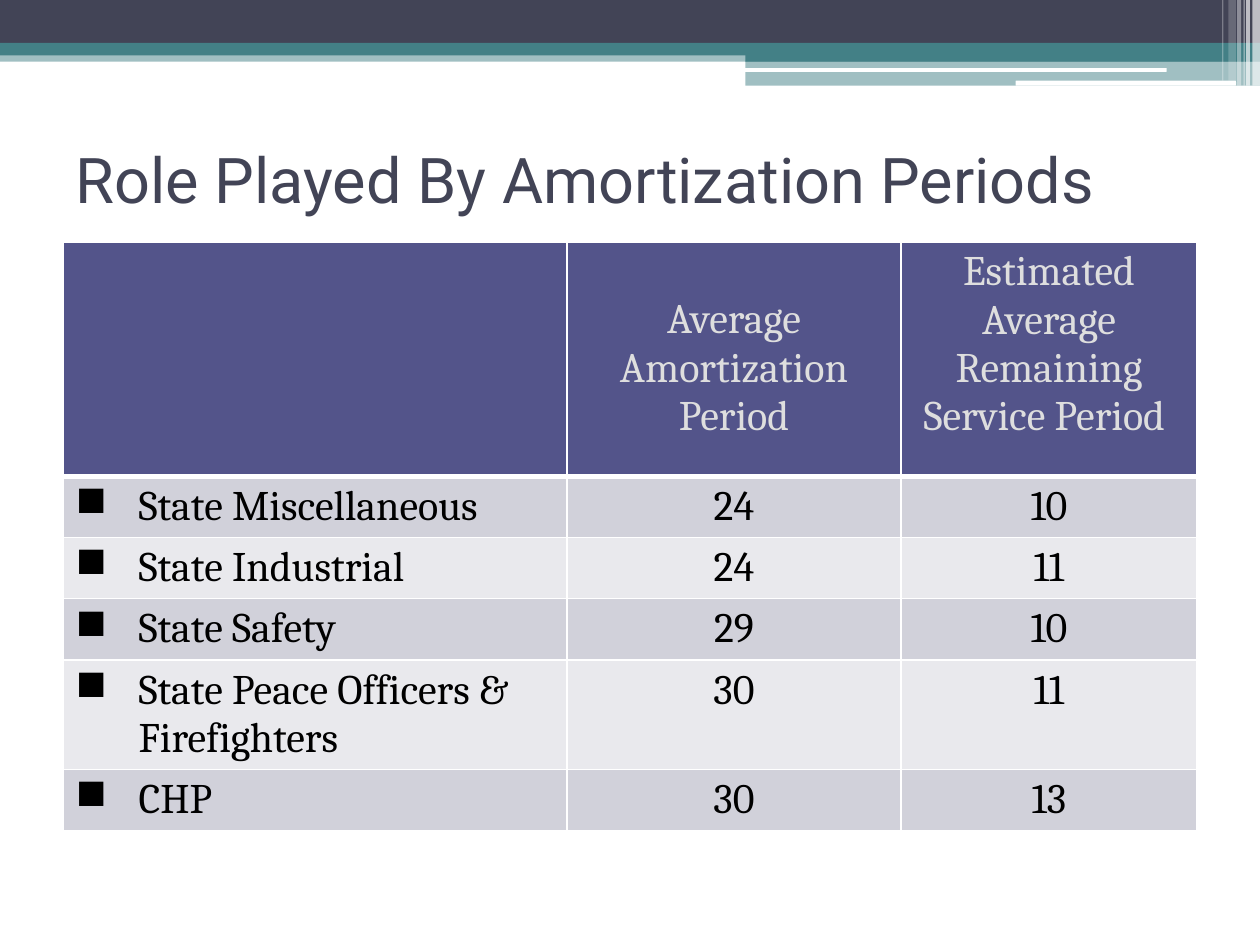
"""Build a slide with a table of amortization periods under a banded header."""
from dataclasses import dataclass

import lxml.etree
import pptx
import pptx.dml.color
import pptx.enum.shapes
import pptx.enum.text
import pptx.oxml.ns
import pptx.util

Pt = pptx.util.Pt
RGBColor = pptx.dml.color.RGBColor
qn = pptx.oxml.ns.qn
MSO_SHAPE = pptx.enum.shapes.MSO_SHAPE
PP_ALIGN = pptx.enum.text.PP_ALIGN
MSO_ANCHOR = pptx.enum.text.MSO_ANCHOR

WHITE = RGBColor(0xFF, 0xFF, 0xFF)
BLACK = RGBColor(0, 0, 0)
SLATE = RGBColor(0x42, 0x44, 0x56)
TEAL = RGBColor(0x43, 0x80, 0x86)
HEADER_FILL = RGBColor(0x53, 0x54, 0x8A)
HEADER_TEXT = RGBColor(0xDE, 0xDE, 0xDE)
ROW_FILLS = (RGBColor(0xD1, 0xD1, 0xDA), RGBColor(0xE9, 0xE9, 0xED))


@dataclass(frozen=True)
class Band:
    left: float
    top: float
    width: float
    height: float
    color: RGBColor
    opacity: int = 100
    rounded: bool = False


@dataclass(frozen=True)
class PlanRow:
    name: str
    amortization: int
    service: int
    height: float = 35


BANDS = (
    Band(0, 28.8, 720, 6.5, TEAL, 50),
    Band(0, 0, 720, 24.5, SLATE),
    Band(0, 24.5, 720, 7.2, TEAL),
    Band(426, 28, 294, 7.2, TEAL),
    Band(426, 34.6, 294, 14.4, TEAL, 50),
    Band(425.5, 38.9, 241.2, 2.2, WHITE, rounded=True),
    Band(580.3, 46.1, 126, 2.9, WHITE, rounded=True),
    Band(715.7, 0, 4.3, 49, WHITE, 65),
    Band(712.1, 0, 2.2, 49, WHITE, 65),
    Band(710.6, 0, 0.7, 49, WHITE, 60),
    Band(707, 0, 2.2, 49, WHITE, 40),
    Band(702, 0, 4.3, 46.1, WHITE, 20),
    Band(698.4, 0, 0.7, 46.1, WHITE, 30),
)
HEADINGS = ("", "Average Amortization Period", "Estimated Average Remaining Service Period ")
HEADING_TOP_MARGINS = (3.6, 31, 3.6)
HEADING_HEIGHT = 134
COLUMN_WIDTHS = (288, 190.8, 169.2)
PLAN_ROWS = (
    PlanRow("State Miscellaneous", 24, 10),
    PlanRow("State Industrial", 24, 11),
    PlanRow("State Safety", 29, 10),
    PlanRow("State Peace Officers & Firefighters", 30, 11, 62),
    PlanRow("CHP", 30, 13),
)


def apply_format(target: object, values: dict) -> None:
    for name, value in values.items():
        setattr(target, name, value)


def format_font(font: pptx.text.text.Font, name: str, size: float, color: RGBColor) -> None:
    apply_format(font, {"name": name, "size": Pt(size), "bold": False})
    font.color.rgb = color


def draw_band(slide: pptx.slide.Slide, band: Band) -> None:
    kind = MSO_SHAPE.ROUNDED_RECTANGLE if band.rounded else MSO_SHAPE.RECTANGLE
    shape = slide.shapes.add_shape(
        kind, Pt(band.left), Pt(band.top), Pt(band.width), Pt(band.height))
    shape.shadow.inherit = False
    shape.line.fill.background()
    shape.fill.solid()
    shape.fill.fore_color.rgb = band.color
    if band.opacity < 100:
        color = shape.fill._xPr.find(".//" + qn("a:srgbClr"))
        lxml.etree.SubElement(color, qn("a:alpha"), val=str(band.opacity * 1000))


def format_title(slide: pptx.slide.Slide) -> None:
    title = slide.shapes.title
    apply_format(title, {"left": Pt(36), "top": Pt(59.8), "width": Pt(648), "height": Pt(84.2)})
    apply_format(title.text_frame, {
        "text": "Role Played By Amortization Periods",
        "vertical_anchor": MSO_ANCHOR.MIDDLE,
        "auto_size": pptx.enum.text.MSO_AUTO_SIZE.NONE,
        "word_wrap": True,
    })
    paragraph = title.text_frame.paragraphs[0]
    paragraph.alignment = PP_ALIGN.LEFT
    format_font(paragraph.runs[0].font, "Roboto", 36, SLATE)


def set_borders(cell: pptx.table._Cell, bottom: float) -> None:
    properties = cell._tc.get_or_add_tcPr()
    widths = {"a:lnL": 1, "a:lnR": 1, "a:lnT": 1, "a:lnB": bottom}
    for index, (tag, width) in enumerate(widths.items()):
        line = lxml.etree.Element(qn(tag), w=str(Pt(width)))
        fill = lxml.etree.SubElement(line, qn("a:solidFill"))
        lxml.etree.SubElement(fill, qn("a:srgbClr"), val=str(WHITE))
        properties.insert(index, line)


def fill_cell(cell: pptx.table._Cell, text: str, fill: RGBColor, color: RGBColor,
              bottom: float = 1) -> None:
    cell.text = text
    cell.fill.solid()
    cell.fill.fore_color.rgb = fill
    paragraph = cell.text_frame.paragraphs[0]
    paragraph.alignment = PP_ALIGN.CENTER
    format_font(paragraph.font, "Cambria", 24, color)
    for run in paragraph.runs:
        format_font(run.font, "Cambria", 24, color)
    set_borders(cell, bottom)


def add_bullet(cell: pptx.table._Cell) -> None:
    paragraph = cell.text_frame.paragraphs[0]
    paragraph.alignment = PP_ALIGN.LEFT
    properties = paragraph._p.get_or_add_pPr()
    properties.set("marL", str(Pt(36)))
    properties.set("indent", str(Pt(-36)))
    bullet = lxml.etree.Element(qn("a:buChar"), char="■")
    properties.insert(0, bullet)


def draw_table(slide: pptx.slide.Slide) -> None:
    heights = [HEADING_HEIGHT, *(row.height for row in PLAN_ROWS)]
    table = slide.shapes.add_table(
        len(heights), len(COLUMN_WIDTHS), Pt(36), Pt(138.2),
        Pt(sum(COLUMN_WIDTHS)), Pt(sum(heights))).table
    for column, width in zip(table.columns, COLUMN_WIDTHS):
        column.width = Pt(width)
    for row, height in zip(table.rows, heights):
        row.height = Pt(height)
    for index, (heading, margin) in enumerate(zip(HEADINGS, HEADING_TOP_MARGINS)):
        cell = table.cell(0, index)
        fill_cell(cell, heading, HEADER_FILL, HEADER_TEXT, bottom=3)
        cell.margin_top = Pt(margin)
    for number, plan in enumerate(PLAN_ROWS, start=1):
        fill = ROW_FILLS[(number - 1) % 2]
        for index, value in enumerate((plan.name, plan.amortization, plan.service)):
            fill_cell(table.cell(number, index), str(value), fill, BLACK)
        add_bullet(table.cell(number, 0))


def main() -> None:
    presentation = pptx.Presentation()
    apply_format(presentation, {"slide_width": Pt(720), "slide_height": Pt(540)})
    slide = presentation.slides.add_slide(presentation.slide_layouts.get_by_name("Title Only"))
    for band in BANDS:
        draw_band(slide, band)
    format_title(slide)
    draw_table(slide)
    presentation.save("out.pptx")


if __name__ == "__main__":
    main()
